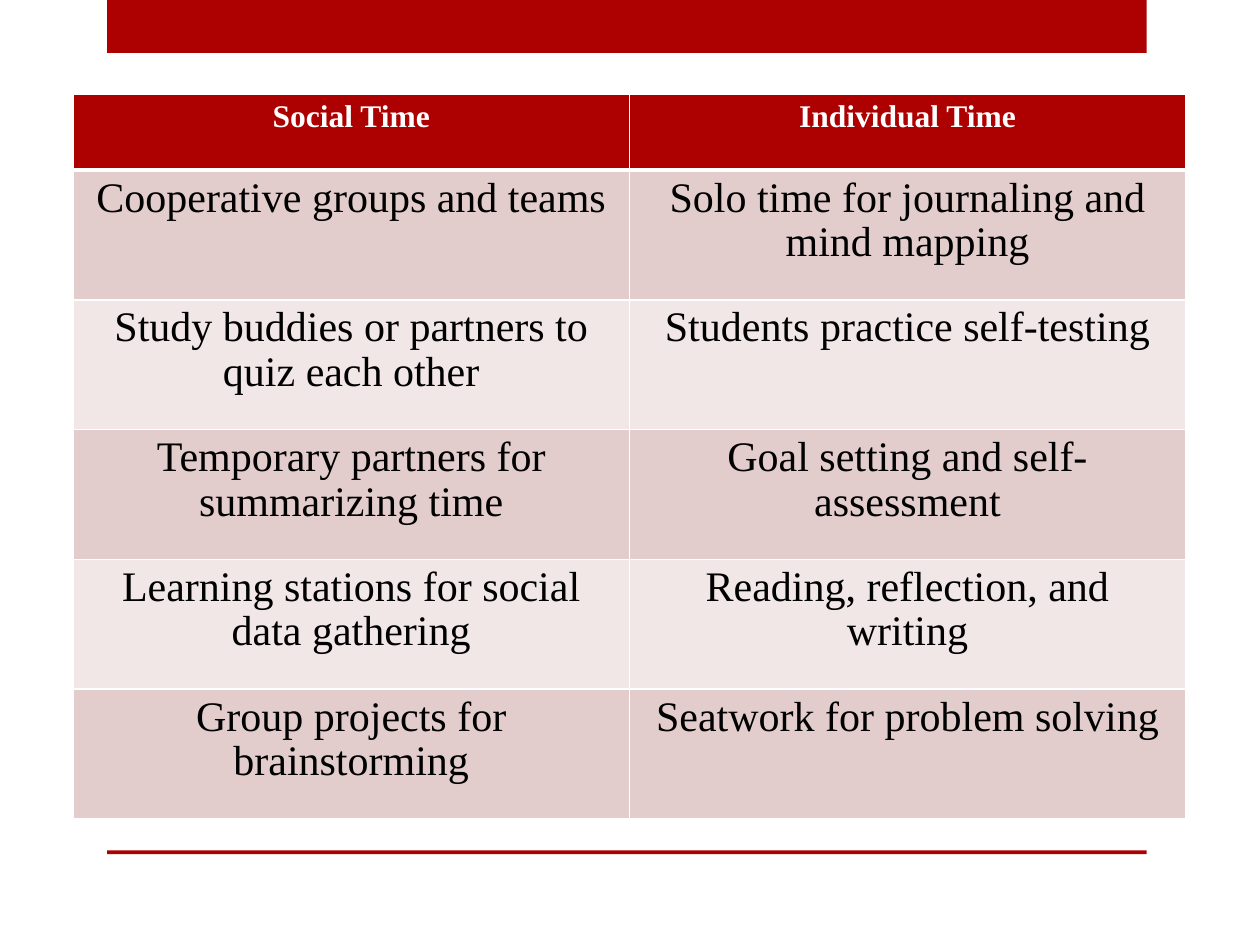
from lxml import etree
from pptx import Presentation
from pptx.dml.color import RGBColor
from pptx.enum.shapes import MSO_SHAPE
from pptx.enum.text import PP_ALIGN
from pptx.oxml.ns import qn
from pptx.util import Inches, Pt

RECTANGLE = MSO_SHAPE.RECTANGLE
CENTER = PP_ALIGN.CENTER

RED = RGBColor(0xAD, 0x01, 0x01)
ROSE = RGBColor(0xE3, 0xCC, 0xCC)
PALE_ROSE = RGBColor(0xF1, 0xE7, 0xE7)
WHITE = RGBColor(0xFF, 0xFF, 0xFF)
BLACK = RGBColor(0x00, 0x00, 0x00)

ACTIVITIES = [
    ("Social Time", "Individual Time"),
    ("Cooperative groups and teams", "Solo time for journaling and mind mapping"),
    ("Study buddies or partners to quiz each other", "Students practice self-testing"),
    ("Temporary partners for summarizing time", "Goal setting and self-assessment"),
    ("Learning stations for social data gathering", "Reading, reflection, and writing"),
    ("Group projects for brainstorming", "Seatwork for problem solving"),
]


class SlideBuilder:
    font_name = "Times New Roman"
    header_size = Pt(18)
    body_size = Pt(24)

    def __init__(self, page):
        self.page = page

    def bar(self, left, top, width, height):
        box = self.page.shapes.add_shape(
            RECTANGLE, Inches(left), Inches(top), Inches(width), Inches(height)
        )
        box.shadow.inherit = False
        box.fill.solid()
        box.fill.fore_color.rgb = RED
        box.line.fill.background()

    def border(self, cell, side, points):
        properties = cell._tc.get_or_add_tcPr()
        line = etree.SubElement(properties, qn(f"a:ln{side}"), w=str(Pt(points)))
        fill = etree.SubElement(line, qn("a:solidFill"))
        etree.SubElement(fill, qn("a:srgbClr"), val=str(WHITE))

    def cell(self, cell, text, row):
        header = row == 0
        widths = {"L": 1, "R": 1, "T": 3 if row == 1 else 1, "B": 3 if header else 1}
        for side, points in widths.items():
            self.border(cell, side, points)
        cell.fill.solid()
        cell.fill.fore_color.rgb = RED if header else ROSE if row % 2 else PALE_ROSE
        cell.text = text
        para = cell.text_frame.paragraphs[0]
        para.alignment = CENTER
        para.line_spacing = 0.96
        para.font.name = self.font_name
        para.font.size = self.header_size if header else self.body_size
        para.font.bold = header
        para.font.color.rgb = WHITE if header else BLACK

    def table(self, rows, left, top, width, header_height, row_height):
        height = header_height + row_height * (len(rows) - 1)
        table = self.page.shapes.add_table(
            len(rows), len(rows[0]),
            Inches(left), Inches(top), Inches(width), Inches(height),
        ).table
        for row, texts in enumerate(rows):
            table.rows[row].height = Inches(row_height if row else header_height)
            for column, text in enumerate(texts):
                self.cell(table.cell(row, column), text, row)


def main():
    deck = Presentation()
    deck.slide_width = Inches(10)
    deck.slide_height = Inches(7.5)
    builder = SlideBuilder(deck.slides.add_slide(deck.slide_layouts[6]))
    builder.bar(0.85, 0, 8.25, 0.42)
    builder.bar(0.85, 6.75, 8.25, 0.03)
    builder.table(ACTIVITIES, 0.58, 0.75, 8.83, 0.6, 1.03)
    deck.save("out.pptx")


if __name__ == "__main__":
    main()
